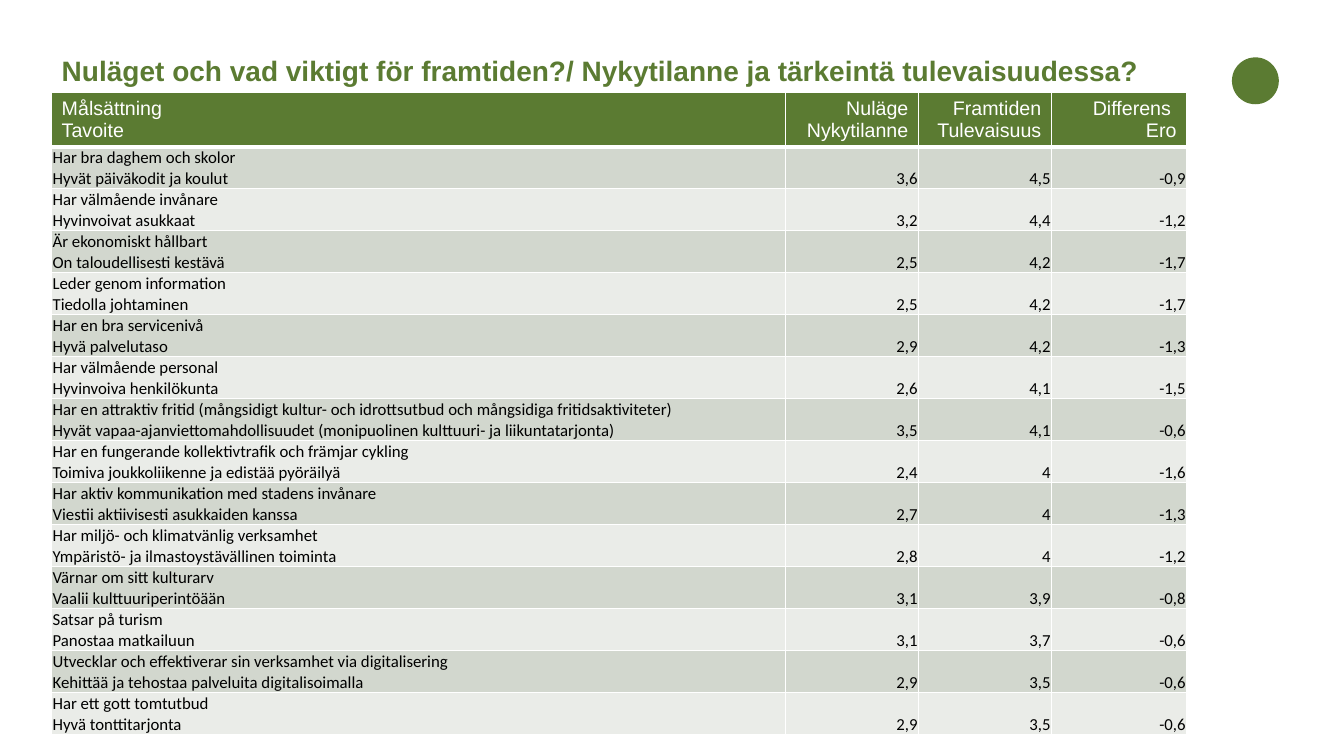
from lxml.etree import SubElement
from pptx import Presentation
from pptx.dml.color import RGBColor
from pptx.enum.shapes import MSO_SHAPE as Preset
from pptx.enum.text import MSO_ANCHOR as Anchor, MSO_AUTO_SIZE as AutoSize, PP_ALIGN as Align
from pptx.oxml.ns import qn
from pptx.util import Pt

GREEN = RGBColor(0x5B, 0x7B, 0x32)
WHITE = RGBColor(0xFF, 0xFF, 0xFF)
BLACK = RGBColor(0x00, 0x00, 0x00)
BANDS = (RGBColor(0xD2, 0xD7, 0xCE), RGBColor(0xEA, 0xEC, 0xE8))

TITLE = "Nuläget och vad viktigt för framtiden?/ Nykytilanne ja tärkeintä tulevaisuudessa?"
HEADINGS = (
    ("Målsättning", "Tavoite"),
    ("Nuläge Nykytilanne",),
    ("Framtiden Tulevaisuus",),
    ("Differens  Ero",),
)
# Swedish goal, Finnish goal, present, future, difference
GOALS = (
    ("Har bra daghem och skolor", "Hyvät päiväkodit ja koulut", "3,6", "4,5", "-0,9"),
    ("Har välmående invånare", "Hyvinvoivat asukkaat", "3,2", "4,4", "-1,2"),
    ("Är ekonomiskt hållbart", "On taloudellisesti kestävä", "2,5", "4,2", "-1,7"),
    ("Leder genom information", "Tiedolla johtaminen", "2,5", "4,2", "-1,7"),
    ("Har en bra servicenivå", "Hyvä palvelutaso", "2,9", "4,2", "-1,3"),
    ("Har välmående personal", "Hyvinvoiva henkilökunta", "2,6", "4,1", "-1,5"),
    ("Har en attraktiv fritid (mångsidigt kultur- och idrottsutbud och mångsidiga fritidsaktiviteter)",
     "Hyvät vapaa-ajanviettomahdollisuudet (monipuolinen kulttuuri- ja liikuntatarjonta)",
     "3,5", "4,1", "-0,6"),
    ("Har en fungerande kollektivtrafik och främjar cykling",
     "Toimiva joukkoliikenne ja edistää pyöräilyä", "2,4", "4", "-1,6"),
    ("Har aktiv kommunikation med stadens invånare",
     "Viestii aktiivisesti asukkaiden kanssa", "2,7", "4", "-1,3"),
    ("Har miljö- och klimatvänlig verksamhet",
     "Ympäristö- ja ilmastoystävällinen toiminta", "2,8", "4", "-1,2"),
    ("Värnar om sitt kulturarv", "Vaalii kulttuuriperintöään", "3,1", "3,9", "-0,8"),
    ("Satsar på turism", "Panostaa matkailuun", "3,1", "3,7", "-0,6"),
    ("Utvecklar och effektiverar sin verksamhet via digitalisering",
     "Kehittää ja tehostaa palveluita digitalisoimalla", "2,9", "3,5", "-0,6"),
    ("Har ett gott tomtutbud", "Hyvä tonttitarjonta", "2,9", "3,5", "-0,6"),
)

LEFT, WIDTH = 36.9, 810.7
COLUMN_WIDTHS = (524.2, 95, 95, 96.5)
TABLE_TOP, HEADER_HEIGHT, ROW_HEIGHT = 66.2, 38, 30


def add_span(para, text, font_name, size, color, bold=False):
    span = para.add_run()
    span.text = text
    font = span.font
    font.name, font.size, font.bold = font_name, Pt(size), bold
    font.color.rgb = color


def set_title(page):
    title = page.shapes.title
    title.left, title.top, title.width, title.height = Pt(LEFT), Pt(28.8), Pt(WIDTH), Pt(55.4)
    frame = title.text_frame
    frame.word_wrap = True
    frame.auto_size = AutoSize.NONE
    frame.vertical_anchor = Anchor.TOP
    para = frame.paragraphs[0]
    para.alignment = Align.LEFT
    para.line_spacing = Pt(30)
    add_span(para, TITLE, "Arial", 20, GREEN, bold=True)


def add_emblem(page):
    emblem = page.shapes.add_shape(Preset.OVAL, Pt(880), Pt(41), Pt(33.5), Pt(33.5))
    emblem.shadow.inherit = False
    emblem.fill.solid()
    emblem.fill.fore_color.rgb = GREEN
    emblem.line.fill.background()


def set_borders(cell, top, bottom):
    properties = cell._tc.get_or_add_tcPr()
    widths = {"a:lnL": 1, "a:lnR": 1, "a:lnT": top, "a:lnB": bottom}
    for position, (side, width) in enumerate(widths.items()):
        line = SubElement(properties, qn(side), w=str(Pt(width)))
        fill = SubElement(line, qn("a:solidFill"))
        SubElement(fill, qn("a:srgbClr"), val=str(WHITE))
        properties.insert(position, line)


def fill_cell(cell, lines, alignment, fill, font_name, size, color):
    cell.fill.solid()
    cell.fill.fore_color.rgb = fill
    frame = cell.text_frame
    for index, text in enumerate(lines):
        para = frame.add_paragraph() if index else frame.paragraphs[0]
        para.alignment = alignment
        add_span(para, text, font_name, size, color)


def add_goal_table(page):
    height = HEADER_HEIGHT + ROW_HEIGHT * len(GOALS)
    table = page.shapes.add_table(len(GOALS) + 1, len(HEADINGS), Pt(LEFT), Pt(TABLE_TOP),
                                  Pt(WIDTH), Pt(height)).table
    for column, width in zip(table.columns, COLUMN_WIDTHS):
        column.width = Pt(width)
    for index, row in enumerate(table.rows):
        row.height = Pt(ROW_HEIGHT if index else HEADER_HEIGHT)
    alignments = (Align.LEFT, Align.RIGHT, Align.RIGHT, Align.RIGHT)

    # Header row
    for column, lines in enumerate(HEADINGS):
        cell = table.cell(0, column)
        fill_cell(cell, lines, alignments[column], GREEN, "Arial", 14, WHITE)
        set_borders(cell, 1, 3)

    # One banded row per goal
    for row, (swedish, finnish, *scores) in enumerate(GOALS, start=1):
        contents = [(swedish, finnish)] + [(score,) for score in scores]
        for column, lines in enumerate(contents):
            cell = table.cell(row, column)
            cell.margin_left = cell.margin_right = cell.margin_top = Pt(0.7)
            cell.margin_bottom = Pt(0)
            cell.vertical_anchor = Anchor.BOTTOM
            fill_cell(cell, lines, alignments[column], BANDS[(row - 1) % 2],
                      "Calibri", 12, BLACK)
            set_borders(cell, 3 if row == 1 else 1, 1)


def main():
    deck = Presentation()
    deck.slide_width, deck.slide_height = Pt(960), Pt(540)
    page = deck.slides.add_slide(deck.slide_layouts[5])
    add_emblem(page)
    set_title(page)
    add_goal_table(page)
    deck.save("out.pptx")


if __name__ == "__main__":
    main()
